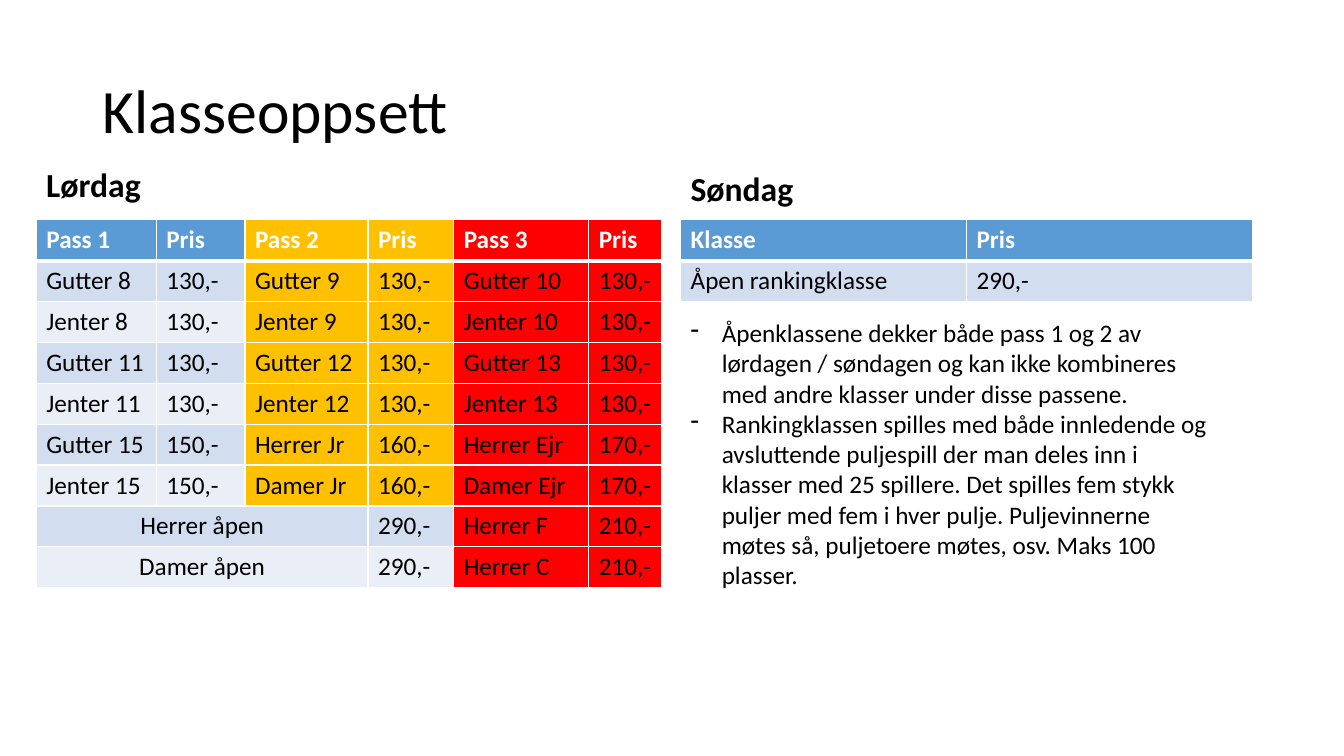
"""Build the class and price overview slide for Saturday and Sunday."""
from lxml import etree
from pptx import Presentation
from pptx.dml.color import RGBColor
from pptx.enum.text import MSO_ANCHOR, PP_ALIGN
from pptx.oxml.ns import qn
from pptx.util import Inches, Pt

LEFT, CENTER = PP_ALIGN.LEFT, PP_ALIGN.CENTER
TOP, MIDDLE, BOTTOM = MSO_ANCHOR.TOP, MSO_ANCHOR.MIDDLE, MSO_ANCHOR.BOTTOM
COLORS = {"black": "000000", "white": "FFFFFF", "blue": "5B9BD5", "amber": "FFC000",
          "red": "FF0000", "band_dark": "D2DEEF", "band_light": "EAEFF7"}

prs = Presentation()
prs.slide_width, prs.slide_height = Inches(13.33), Inches(7.5)
COL, ROW = prs.slide_width / 100, prs.slide_height / 100
s = prs.slides.add_slide(prs.slide_layouts[6])


def write(tf, text, size=18, color="black", bold=False, align=LEFT, spacing=1.0, bullet=None):
    p = tf.paragraphs[0] if not tf.text else tf.add_paragraph()
    p.alignment, p.line_spacing = align, spacing
    if bullet:
        pPr = p._p.get_or_add_pPr()
        pPr.set("marL", str(Inches(0.31)))
        pPr.set("indent", str(-Inches(0.31)))
        etree.SubElement(pPr, qn("a:buChar"), char=bullet)
    r = p.add_run()
    r.text = text
    r.font.name, r.font.size, r.font.bold = "Calibri", Pt(size), bold
    r.font.color.rgb = RGBColor.from_string(COLORS[color])


def add_box(left, top, width, height, anchor):
    sp = s.shapes.add_textbox(int(left * COL), int(top * ROW), int(width * COL), int(height * ROW))
    tf = sp.text_frame
    tf.word_wrap, tf.vertical_anchor = True, anchor
    return tf


SATURDAY_LEFT, SUNDAY_LEFT, TABLE_TOP, ROW_HEIGHT = 2.7, 50.64, 29.07, 5.41

write(add_box(6.9, 5.33, 86.27, 19.33, MIDDLE), "Klasseoppsett", size=44, spacing=0.9)
write(add_box(SATURDAY_LEFT, 20.53, 42.31, 7.2, BOTTOM), "Lørdag", size=24, bold=True, spacing=0.9)
write(add_box(SUNDAY_LEFT, 20, 42.54, 8.27, BOTTOM), "Søndag", size=24, bold=True, spacing=0.9)

saturday = [
    ["Pass 1", "Pris", "Pass 2", "Pris", "Pass 3", "Pris"],
    ["Gutter 8", "130,-", "Gutter 9", "130,-", "Gutter 10", "130,-"],
    ["Jenter 8", "130,-", "Jenter 9", "130,-", "Jenter 10", "130,-"],
    ["Gutter 11", "130,-", "Gutter 12", "130,-", "Gutter 13", "130,-"],
    ["Jenter 11", "130,-", "Jenter 12", "130,-", "Jenter 13", "130,-"],
    ["Gutter 15", "150,-", "Herrer Jr", "160,-", "Herrer Ejr", "170,-"],
    ["Jenter 15", "150,-", "Damer Jr", "160,-", "Damer Ejr", "170,-"],
    ["Herrer åpen", "", "", "290,-", "Herrer F", "210,-"],
    ["Damer åpen", "", "", "290,-", "Herrer C", "210,-"],
]
sunday = [["Klasse", "Pris"], ["Åpen rankingklasse", "290,-"]]
tables = [
    (SATURDAY_LEFT, [8.93, 6.6, 9.15, 6.38, 10.05, 5.4], saturday,
     ["blue", "blue", "amber", "amber", "red", "red"]),
    (SUNDAY_LEFT, [21.27, 21.27], sunday, ["blue", "blue"]),
]

for left, widths, rows, headings in tables:
    table = s.shapes.add_table(len(rows), len(widths), int(left * COL), int(TABLE_TOP * ROW),
                               int(sum(widths) * COL), int(len(rows) * ROW_HEIGHT * ROW)).table
    for column, width in zip(table.columns, widths):
        column.width = int(width * COL)
    for i, values in enumerate(rows):
        table.rows[i].height = int(ROW_HEIGHT * ROW)
        band = "band_dark" if i % 2 else "band_light"
        is_open = "" in values
        for j, text in enumerate(values):
            cell = table.cell(i, j)
            tcPr = cell._tc.get_or_add_tcPr()
            for side in ("lnL", "lnR", "lnT", "lnB"):
                weight = 3 if i == 0 and side == "lnB" else 1
                ln = etree.SubElement(tcPr, qn(f"a:{side}"), w=str(Pt(weight)))
                fill = etree.SubElement(ln, qn("a:solidFill"))
                etree.SubElement(fill, qn("a:srgbClr"), val=COLORS["white"])
            banded = i > 0 and (headings[j] == "blue" or is_open and headings[j] == "amber")
            cell.fill.solid()
            cell.fill.fore_color.rgb = RGBColor.from_string(COLORS[band if banded else headings[j]])
            if text:
                write(cell.text_frame, text, color="black" if i else "white", bold=i == 0,
                      align=CENTER if is_open and j == 0 else LEFT)
        if is_open:
            table.cell(i, 0).merge(table.cell(i, 2))

tf = add_box(SUNDAY_LEFT, 41.33, 40.36, 37.73, TOP)
for note in (
    "Åpenklassene dekker både pass 1 og 2 av lørdagen / søndagen og kan ikke kombineres "
    "med andre klasser under disse passene.",
    "Rankingklassen spilles med både innledende og avsluttende puljespill der man deles inn "
    "i klasser med 25 spillere. Det spilles fem stykk puljer med fem i hver pulje. "
    "Puljevinnerne møtes så, puljetoere møtes, osv. Maks 100 plasser.",
):
    write(tf, note, bullet="-")

prs.save("out.pptx")
